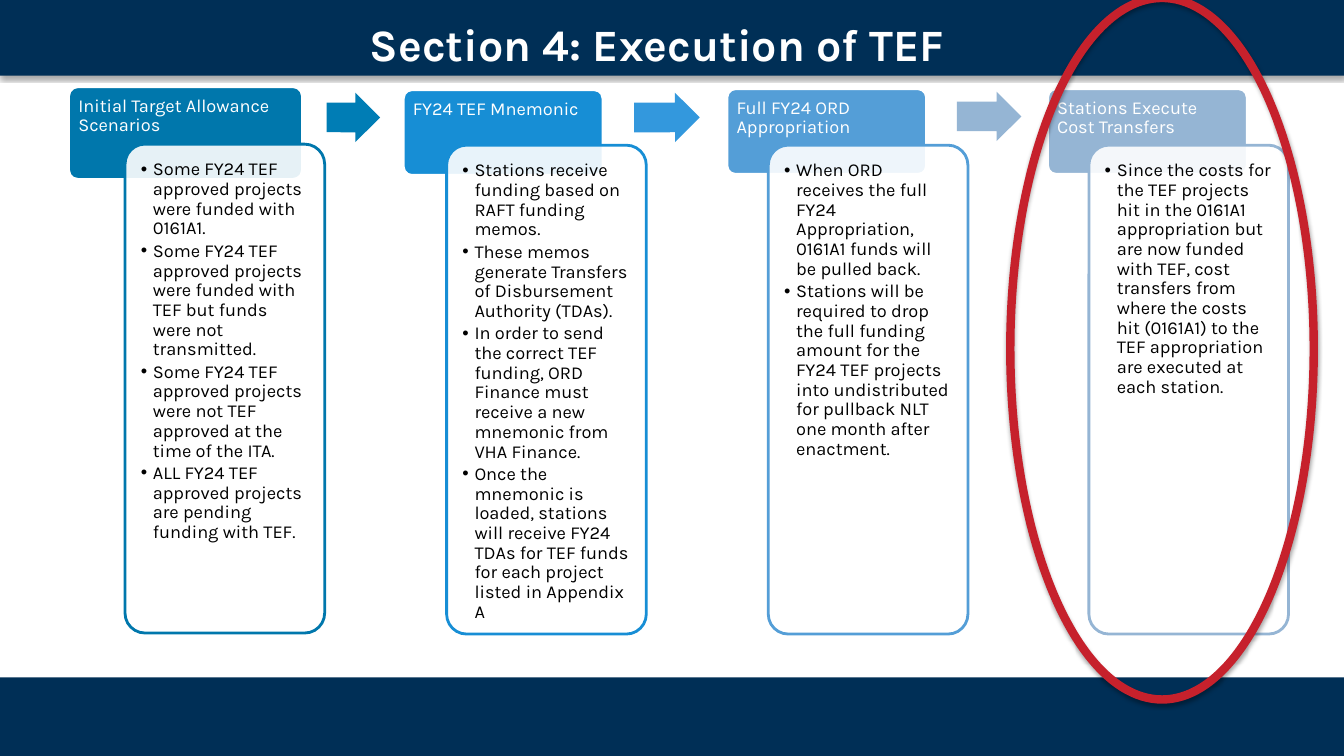
from lxml.etree import SubElement
from pptx import Presentation
from pptx.dml.color import RGBColor
from pptx.enum.shapes import MSO_SHAPE
from pptx.enum.text import MSO_ANCHOR, PP_ALIGN
from pptx.oxml.ns import qn
from pptx.util import Inches, Pt

FONT = "Karla"
COLORS = {
    "navy": "002F56", "white": "FFFFFF", "black": "000000", "red": "C6212C",
    "teal": "0077AC", "teal_arrow": "007DB5", "azure": "178ED5",
    "azure_arrow": "3398DD", "sky": "549ED7", "mist": "95B5D4",
}
TITLE = "Section 4: Execution of TEF"
STEPS = [
    {"heading": "Initial Target Allowance Scenarios", "color": "teal",
     "header": (0.68, 0.86, 2.32, 0.92), "panel": (1.24, 1.43),
     "points": [
         "Some FY24 TEF approved projects were funded with 0161A1.",
         "Some FY24 TEF approved projects were funded with TEF but funds were not transmitted.",
         "Some FY24 TEF approved projects were not TEF approved at the time of the ITA.",
         "ALL FY24 TEF approved projects are pending funding with TEF."]},
    {"heading": "FY24 TEF Mnemonic", "color": "azure",
     "header": (4, 0.89, 1.98, 0.85), "panel": (4.43, 1.44),
     "points": [
         "Stations receive funding based on RAFT funding memos.",
         "These memos generate Transfers of Disbursement Authority (TDAs).",
         "In order to send the correct TEF funding, ORD Finance must receive a new "
         "mnemonic from VHA Finance.",
         "Once the mnemonic is loaded, stations will receive FY24 TDAs for TEF funds "
         "for each project listed in Appendix A"]},
    {"heading": "Full FY24 ORD Appropriation", "color": "sky",
     "header": (7.21, 0.88, 1.98, 0.85), "panel": (7.62, 1.44),
     "points": [
         "When ORD receives the full FY24 Appropriation, 0161A1 funds will be pulled back.",
         "Stations will be required to drop the full funding amount for the FY24 TEF "
         "projects into undistributed for pullback NLT one month after enactment."]},
    {"heading": "Stations Execute Cost Transfers", "color": "mist",
     "header": (10.39, 0.88, 1.98, 0.85), "panel": (10.8, 1.44),
     "points": [
         "Since the costs for the TEF projects hit in the 0161A1 appropriation but are "
         "now funded with TEF, cost transfers from where the costs hit (0161A1) to the "
         "TEF appropriation are executed at each station."]},
]
ARROWS = [
    ((3.24, 0.92, 0.53, 0.49), "teal_arrow", 0.1),
    ((6.29, 0.92, 0.65, 0.49), "azure_arrow", -0.2),
    ((9.49, 0.91, 0.64, 0.49), "mist", 0),
]
PANEL_SIZE = (1.98, 4.85)


def rgb(name):
    return RGBColor.from_string(COLORS[name])


def add_block(slide, kind, box, fill=None, line=None, weight=2):
    shape = slide.shapes.add_shape(kind, *map(Inches, box))
    shape.shadow.inherit = False
    if fill:
        shape.fill.solid()
        shape.fill.fore_color.rgb = rgb(fill)
    else:
        shape.fill.background()
    if line:
        shape.line.color.rgb = rgb(line)
        shape.line.width = Pt(weight)
    else:
        shape.line.fill.background()
    return shape


def add_shadow(shape):
    effects = shape.element.spPr.find(qn("a:effectLst"))
    shadow = SubElement(effects, qn("a:outerShdw"), blurRad=str(Pt(3.1)),
                        dist=str(Pt(1.8)), dir="5400000", rotWithShape="0")
    color = SubElement(shadow, qn("a:srgbClr"), val=COLORS["black"])
    SubElement(color, qn("a:alpha"), val="35000")


def write_text(shape, lines, color, inset, space_after, bulleted=False):
    frame = shape.text_frame
    frame.word_wrap = True
    frame.vertical_anchor = MSO_ANCHOR.TOP
    frame.margin_left = frame.margin_right = frame.margin_top = Inches(inset)
    frame.margin_bottom = Inches(0.05)
    frame.text = "\n".join(lines)
    for paragraph in frame.paragraphs:
        paragraph.alignment = PP_ALIGN.LEFT
        paragraph.line_spacing = 0.9
        paragraph.space_after = Pt(space_after)
        if bulleted:
            properties = paragraph._p.get_or_add_pPr()
            properties.set("marL", str(Inches(0.12)))
            properties.set("indent", str(Inches(-0.12)))
            SubElement(properties, qn("a:buFont"), typeface="Arial")
            SubElement(properties, qn("a:buChar"), char="•")
        for run in paragraph.runs:
            run.font.name = FONT
            run.font.size = Pt(13)
            run.font.color.rgb = rgb(color)


def add_title(slide):
    title = slide.shapes.title
    title.left, title.top, title.width, title.height = map(Inches, (1.35, 0.11, 10.34, 0.64))
    title.text_frame.text = TITLE
    title.text_frame.vertical_anchor = MSO_ANCHOR.MIDDLE
    paragraph = title.text_frame.paragraphs[0]
    paragraph.alignment = PP_ALIGN.CENTER
    font = paragraph.runs[0].font
    font.name, font.size, font.bold = FONT, Pt(32), True
    font.color.rgb = rgb("white")
    title.element.getparent().append(title.element)


def add_step(slide, step):
    header = add_block(slide, MSO_SHAPE.ROUNDED_RECTANGLE, step["header"], step["color"], "white")
    header.adjustments[0] = 0.1
    write_text(header, [step["heading"]], "white", 0.07, 4.5)
    panel = add_block(slide, MSO_SHAPE.ROUNDED_RECTANGLE, step["panel"] + PANEL_SIZE,
                      "white", step["color"])
    panel.adjustments[0] = 0.1
    fill_color = panel.element.spPr.find(qn("a:solidFill")).find(qn("a:srgbClr"))
    SubElement(fill_color, qn("a:alpha"), val="90000")
    write_text(panel, step["points"], "black", 0.1, 2, bulleted=True)


def main():
    presentation = Presentation()
    presentation.slide_width, presentation.slide_height = Inches(13.33), Inches(7.5)
    slide = presentation.slides.add_slide(presentation.slide_layouts[5])
    add_block(slide, MSO_SHAPE.RECTANGLE, (0, 6.72, 13.33, 0.78), "navy")
    add_shadow(add_block(slide, MSO_SHAPE.RECTANGLE, (0, 0, 13.33, 0.75), "navy"))
    add_title(slide)
    for step in STEPS:
        add_step(slide, step)
    for box, color, rotation in ARROWS:
        arrow = add_block(slide, MSO_SHAPE.RIGHT_ARROW, box, color)
        arrow.adjustments[0] = 0.6
        arrow.rotation = rotation
    add_shadow(add_block(slide, MSO_SHAPE.OVAL, (10.02, -0.02, 3.01, 6.96), line="red", weight=6))
    presentation.save("out.pptx")


if __name__ == "__main__":
    main()
